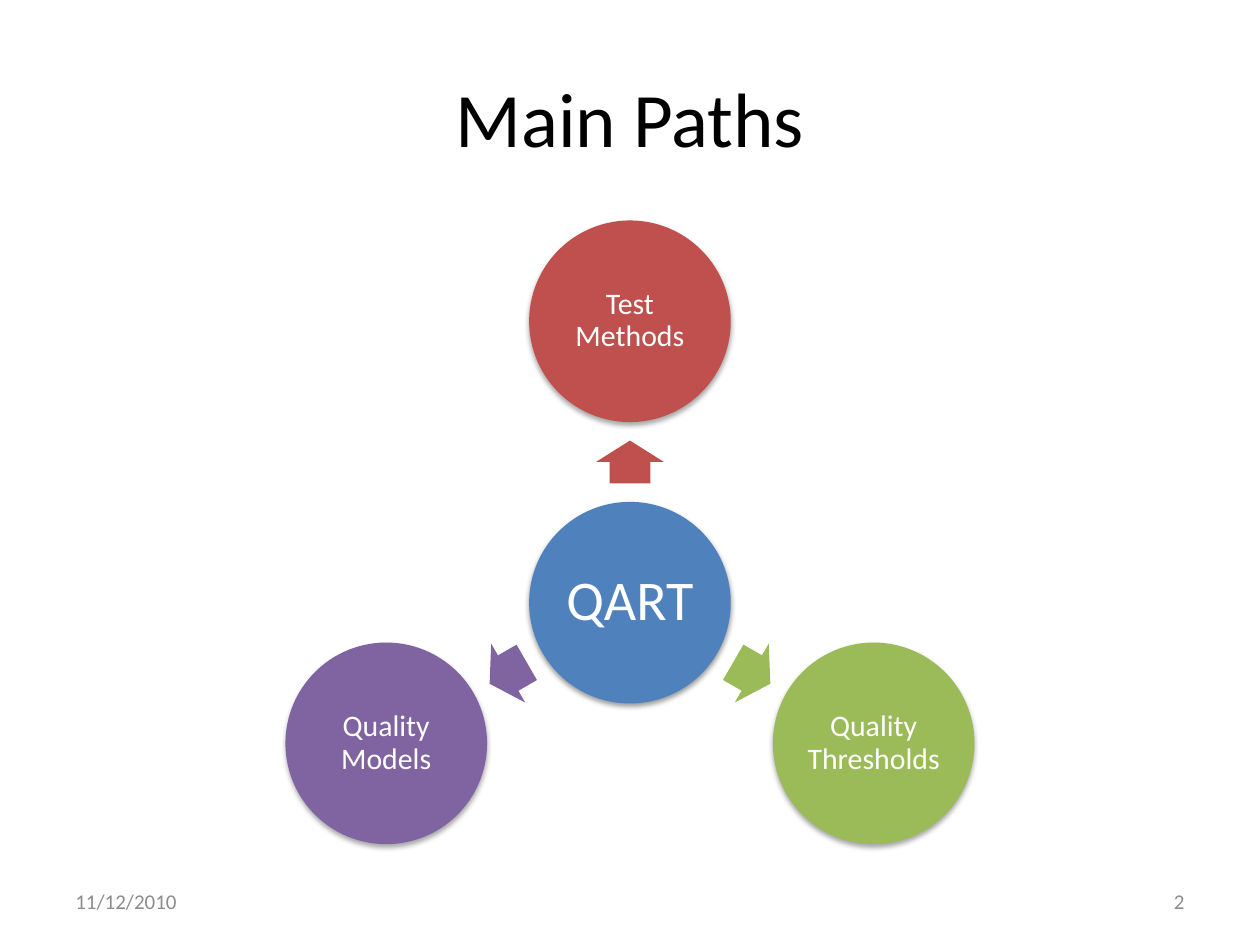
from math import cos, radians, sin

from lxml import etree
from pptx import Presentation
from pptx.dml.color import RGBColor
from pptx.enum.shapes import MSO_SHAPE
from pptx.enum.text import MSO_ANCHOR, PP_ALIGN
from pptx.oxml.ns import qn
from pptx.util import Inches, Pt

FONT = "Calibri"
BLACK = RGBColor(0x00, 0x00, 0x00)
WHITE = RGBColor(0xFF, 0xFF, 0xFF)
GRAY = RGBColor(0x8C, 0x8C, 0x8C)
BLUE = RGBColor(0x4F, 0x81, 0xBD)
RED = RGBColor(0xC0, 0x50, 0x4D)
GREEN = RGBColor(0x9B, 0xBB, 0x59)
PURPLE = RGBColor(0x80, 0x64, 0xA2)

DIAMETER = 1.6
ARROW_LENGTH, ARROW_WIDTH = 0.34, 0.54
# Label, colour, direction in degrees clockwise from the right
PATHS = [
    ("Test Methods", RED, 270),
    ("Quality Thresholds", GREEN, 30),
    ("Quality Models", PURPLE, 150),
]


def write_text(shape, text, size, color, alignment):
    frame = shape.text_frame
    frame.word_wrap = True
    frame.vertical_anchor = MSO_ANCHOR.MIDDLE
    frame.text = text
    paragraph = frame.paragraphs[0]
    paragraph.alignment = alignment
    paragraph.font.name = FONT
    paragraph.font.size = Pt(size)
    paragraph.font.color.rgb = color
    return paragraph


def add_centered_shape(slide, kind, x, y, width, height, color):
    shape = slide.shapes.add_shape(
        kind, Inches(x - width / 2), Inches(y - height / 2), Inches(width), Inches(height)
    )
    shape.fill.solid()
    shape.fill.fore_color.rgb = color
    shape.line.fill.background()
    shape.shadow.inherit = False
    return shape


def add_soft_shadow(shape, distance, opacity):
    """Add a blurred black shadow straight below the shape."""
    effects = shape._element.spPr.find(qn("a:effectLst"))
    shadow = etree.SubElement(
        effects, qn("a:outerShdw"), blurRad=str(Pt(3.1)), dist=str(Pt(distance)),
        dir=str(90 * 60000), rotWithShape="0",
    )
    color = etree.SubElement(shadow, qn("a:srgbClr"), val="000000")
    etree.SubElement(color, qn("a:alpha"), val=str(opacity * 1000))


def add_circle(slide, x, y, text, color, size=17, inset=0.02, distance=1.8, opacity=35):
    circle = add_centered_shape(slide, MSO_SHAPE.OVAL, x, y, DIAMETER, DIAMETER, color)
    add_soft_shadow(circle, distance, opacity)
    frame = circle.text_frame
    frame.margin_left = frame.margin_right = Inches(inset)
    frame.margin_top = frame.margin_bottom = Inches(inset)
    paragraph = write_text(circle, text, size, WHITE, PP_ALIGN.CENTER)
    paragraph.line_spacing = 0.9


def add_radial_diagram(slide, left, top, width, height):
    """Place a hub in the box, with one arrow and one circle per path around it."""
    # The box holds one radius above the hub and half a radius below it.
    radius = (height - DIAMETER) / 1.5
    x, y = left + width / 2, top + DIAMETER / 2 + radius
    add_circle(slide, x, y, "QART", BLUE, size=32, inset=0.04, distance=1.6, opacity=38)
    for label, color, angle in PATHS:
        dx, dy = radius * cos(radians(angle)), radius * sin(radians(angle))
        arrow = add_centered_shape(
            slide, MSO_SHAPE.RIGHT_ARROW, x + dx / 2, y + dy / 2,
            ARROW_LENGTH, ARROW_WIDTH, color,
        )
        arrow.adjustments[0] = 0.6
        arrow.adjustments[1] = 0.5
        arrow.rotation = angle
        add_circle(slide, x + dx, y + dy, label, color)


def add_title(slide, left, top, width, height):
    title = slide.shapes.title
    title.left, title.top = Inches(left), Inches(top)
    title.width, title.height = Inches(width), Inches(height)
    write_text(title, "Main Paths", 44, BLACK, PP_ALIGN.CENTER)


def add_footer(slide, left, top, width, height):
    box_width = 2.33
    for x, text, alignment in [
        (left, "11/12/2010", PP_ALIGN.LEFT),
        (left + width - box_width, "2", PP_ALIGN.RIGHT),
    ]:
        box = slide.shapes.add_textbox(
            Inches(x), Inches(top), Inches(box_width), Inches(height)
        )
        write_text(box, text, 12, GRAY, alignment)


def main():
    presentation = Presentation()
    presentation.slide_width, presentation.slide_height = Inches(10), Inches(7.5)
    slide = presentation.slides.add_slide(presentation.slide_layouts[5])
    add_title(slide, 0.5, 0.3, 9, 1.25)
    add_radial_diagram(slide, 2.27, 1.75, 5.46, 4.95)
    add_footer(slide, 0.5, 6.95, 9, 0.4)
    presentation.save("out.pptx")


if __name__ == "__main__":
    main()
